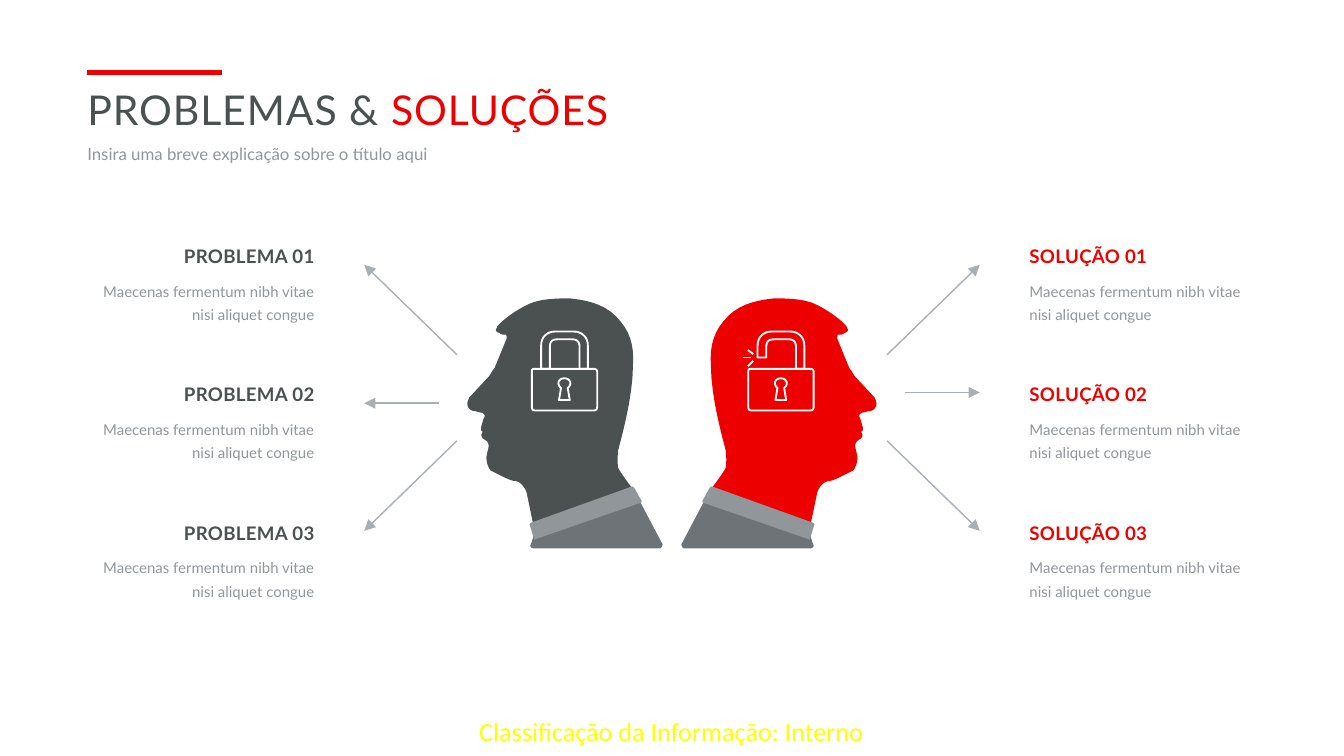
from collections import namedtuple

from lxml import etree
from pptx import Presentation
from pptx import util as u
from pptx.dml.color import RGBColor
from pptx.enum import shapes, text
from pptx.oxml.ns import qn

WIDTH, HEIGHT = u.Inches(10), u.Inches(5.625)
CELL = WIDTH // 1000
RED, DARK, SLATE, GREY, SILVER = "EC0000", "4B5050", "6E7378", "91969B", "AAAFB4"
WHITE, YELLOW = "FFFFFF", "FFFF00"
BLURB = "Maecenas fermentum nibh vitae nisi aliquet congue"

Box = namedtuple("Box", "left top width height")

FACE = [
    (124, 142), (50, 169), (45, 145), (44, 141, 41, 137, 37, 136),
    (35, 136, 32, 135, 28, 133), (24, 131, 20, 129, 18, 128),
    (16, 125, 15, 122, 15, 118), (16, 113), (17, 110, 17, 108, 15, 106),
    (12, 104), (11, 102, 11, 101, 12, 100), (12, 99), (11, 98), (11, 96),
    (13, 89), (14, 88, 14, 87, 13, 86), (13, 86, 12, 85, 11, 85), (7, 84),
    (3, 84, 0, 81, 1, 77), (1, 76, 2, 75, 2, 74), (16, 59),
    (18, 57, 19, 54, 21, 52), (30, 30), (30, 28, 30, 27, 29, 27),
    (27, 27, 26, 27, 25, 26), (23, 25, 22, 25, 22, 23),
    (22, 23, 23, 22, 23, 21), (26, 17, 36, 9, 47, 4), (56, 0, 70, 0, 77, 0),
    (86, 1, 101, 3, 111, 13), (122, 24, 125, 35, 124, 50),
    (124, 74, 115, 105, 113, 113), (113, 114, 112, 120, 113, 126),
    (114, 129, 124, 142, 124, 142),
]
SHOULDER = [(127, 147), (146, 183), (146, 184, 145, 186, 144, 186), (50, 186),
            (48, 186, 47, 184, 48, 183), (50, 177)]
COLLAR = [(123, 140), (48, 167), (47, 168), (50, 178), (50, 179, 51, 180, 52, 179),
          (130, 152), (130, 152, 131, 151, 130, 150), (125, 141),
          (124, 140, 124, 140, 123, 140)]

LOCK_BODY = [(3, 28.5), (47, 28.5), (48, 28.5, 49.4, 29, 49.4, 30.5), (49.4, 57),
             (49.4, 58, 49, 59.4, 47, 59.4), (3, 59.4), (2, 59.4, 0.8, 59, 0.8, 57),
             (0.8, 30.5), (0.8, 29, 1, 28.5, 3, 28.5)]
KEYHOLE = [(22.5, 42.7), (19, 40, 20.5, 35.5, 25, 35.5), (29.5, 35.5, 31, 40, 27.5, 42.7),
           (29, 51.7), (21, 51.7)]
SPARKS = [[(-3, 20), (3, 20)], [(0.5, 14.5), (4.5, 17.5)], [(0.5, 26.5), (4.5, 22.5)]]


def hex_color(value):
    """Turn a hex string into a colour."""
    return RGBColor.from_string(value)


def place(box):
    """Turn a box in grid cells into slide lengths."""
    return [round(side * CELL) for side in box]


def flatten(outline, steps=8):
    """Turn line ends and cubic curves into a list of points."""
    points = [outline[0]]
    for part in outline[1:]:
        if len(part) == 2:
            points.append(part)
            continue
        knots = [points[-1], part[:2], part[2:4], part[4:]]
        for step in range(1, steps + 1):
            t = step / steps
            weights = ((1 - t) ** 3, 3 * t * (1 - t) ** 2, 3 * t * t * (1 - t), t ** 3)
            points.append(tuple(sum(w * k[axis] for w, k in zip(weights, knots))
                                for axis in (0, 1)))
    return points


def draw_outline(slide, box, outlines, fill=None, line=None, mirrored=False):
    """Draw (outline, closed) pairs inside a box as one freeform."""
    def spot(point):
        x = box.width - point[0] if mirrored else point[0]
        return round((box.left + x) * CELL), round((box.top + point[1]) * CELL)

    builder = None
    for outline, closed in outlines:
        points = [spot(point) for point in flatten(outline)]
        if builder is None:
            builder = slide.shapes.build_freeform(*points[0], scale=1.0)
        else:
            builder.move_to(*points[0])
        builder.add_line_segments(points[1:], close=closed)
    drawing = builder.convert_to_shape()
    drawing.shadow.inherit = False
    if fill:
        drawing.fill.solid()
        drawing.fill.fore_color.rgb = hex_color(fill)
    else:
        drawing.fill.background()
    if line:
        drawing.line.color.rgb = hex_color(line)
        drawing.line.width = u.Pt(1)
    else:
        drawing.line.fill.background()


def draw_line(slide, start, end, color, weight, arrow=False):
    """Draw a straight line between two grid points."""
    ends = [round(cell * CELL) for cell in (*start, *end)]
    line = slide.shapes.add_connector(shapes.MSO_CONNECTOR.STRAIGHT, *ends)
    line.line.color.rgb = hex_color(color)
    line.line.width = u.Pt(weight)
    if arrow:
        etree.SubElement(line.line._get_or_add_ln(), qn("a:tailEnd"), type="triangle")
    etree.SubElement(line._element.spPr, qn("a:effectLst"))


def write(frame, runs, size, font="Lato", align=text.PP_ALIGN.LEFT, spacing=None,
          bold=False, tracking=0, anchor=text.MSO_ANCHOR.TOP):
    """Fill a text frame with one paragraph of (words, colour) runs."""
    frame.word_wrap = True
    frame.auto_size = text.MSO_AUTO_SIZE.NONE
    frame.vertical_anchor = anchor
    frame.margin_left = frame.margin_top = frame.margin_right = frame.margin_bottom = 0
    paragraph = frame.paragraphs[0]
    paragraph.alignment = align
    if spacing:
        paragraph.line_spacing = spacing
    for words, color in runs:
        run = paragraph.add_run()
        run.text = words
        run.font.name, run.font.size, run.font.bold = font, u.Pt(size), bold
        run.font.color.rgb = hex_color(color)
        if tracking:
            run.font._element.set("spc", str(tracking))


def add_text(slide, box, *args, **style):
    """Add a text box and write into it."""
    write(slide.shapes.add_textbox(*place(box)).text_frame, *args, **style)


def add_heading(slide, box):
    """Place the accent rule, title and subtitle."""
    draw_line(slide, (box.left, box.top), (box.left + 100, box.top), RED, 2.25)
    title = slide.shapes.title
    title.left, title.top, title.width, title.height = place(
        Box(box.left, box.top + 9, box.width, 42))
    write(title.text_frame, [("PROBLEMAS & ", DARK), ("SOLUÇÕES", RED)], 22, tracking=50)
    add_text(slide, Box(box.left, box.top + 51, box.width, 15),
             [("Insira uma breve explicação sobre o título aqui", GREY)], 9,
             spacing=u.Pt(12))


def add_head(slide, box, color, mirrored):
    """Draw a profile with shoulder and collar."""
    for outline, fill in ((FACE, color), (SHOULDER, SLATE), (COLLAR, GREY)):
        draw_outline(slide, box, [(outline, True)], fill=fill, mirrored=mirrored)


def add_padlock(slide, box, is_open):
    """Draw a padlock, with a cut shackle and sparks when open."""
    foot = 20 if is_open else 28.5
    shackle = [(7.7, foot), (7.7, 11), (7.7, 5, 12, 0.7, 18, 0.7), (32, 0.7),
               (38, 0.7, 42.5, 5, 42.5, 11), (42.5, 28.5), (36.3, 28.5), (36.3, 12),
               (36.3, 8, 34, 6.5, 31, 6.5), (20, 6.5), (16, 6.5, 14.2, 8, 14.2, 12),
               (14.2, foot)]
    parts = [(LOCK_BODY, True), (shackle, True), (KEYHOLE, True)]
    if is_open:
        parts += [(spark, False) for spark in SPARKS]
    draw_outline(slide, box, parts, line=WHITE)


def add_arrows(slide, box, middle, mirrored):
    """Fan three arrows outwards from the head."""
    near, far, inward = box.left + box.width, box.left, -13
    if mirrored:
        near, far, inward = far, near, 13
    bottom = box.top + box.height
    for start, end in (((near, box.top + 67), (far, box.top)),
                       ((near + inward, middle), (far, middle)),
                       ((near, bottom - 67), (far, bottom))):
        draw_line(slide, start, end, SILVER, 0.75, arrow=True)


def add_points(slide, box, label, color, align):
    """Stack three numbered points in equal rows."""
    pitch = box.height / 3
    for index in range(3):
        top = box.top + index * pitch
        add_text(slide, Box(box.left, top, box.width, 17),
                 [(f"{label} {index + 1:02d}", color)], 10, align=align, bold=True,
                 tracking=20)
        add_text(slide, Box(box.left, top + 24, box.width, 33), [(BLURB, GREY)], 8,
                 align=align, spacing=1.3)


def add_classification(slide, box):
    """Place the classification line at the foot."""
    add_text(slide, box, [("Classificação da Informação: Interno", YELLOW)], 14,
             font="Calibri", align=text.PP_ALIGN.CENTER, anchor=text.MSO_ANCHOR.MIDDLE)


def main():
    """Build and save the slide."""
    deck = Presentation()
    deck.slide_width, deck.slide_height = WIDTH, HEIGHT
    slide = deck.slides.add_slide(deck.slide_layouts[5])
    add_classification(slide, Box(334, 526, 331, 36))
    add_heading(slide, Box(65, 54, 870, 66))
    add_head(slide, Box(507, 222, 146, 186), RED, mirrored=True)
    add_head(slide, Box(347, 222, 146, 186), DARK, mirrored=False)
    add_padlock(slide, Box(395, 246, 50, 60), is_open=False)
    add_padlock(slide, Box(556, 246, 50, 60), is_open=True)
    add_arrows(slide, Box(271, 197, 69, 198), 300, mirrored=False)
    add_arrows(slide, Box(660, 197, 69, 198), 292, mirrored=True)
    add_points(slide, Box(766, 182, 169, 309), "SOLUÇÃO", RED, text.PP_ALIGN.LEFT)
    add_points(slide, Box(65, 182, 169, 309), "PROBLEMA", DARK, text.PP_ALIGN.RIGHT)
    deck.save("out.pptx")


if __name__ == "__main__":
    main()
